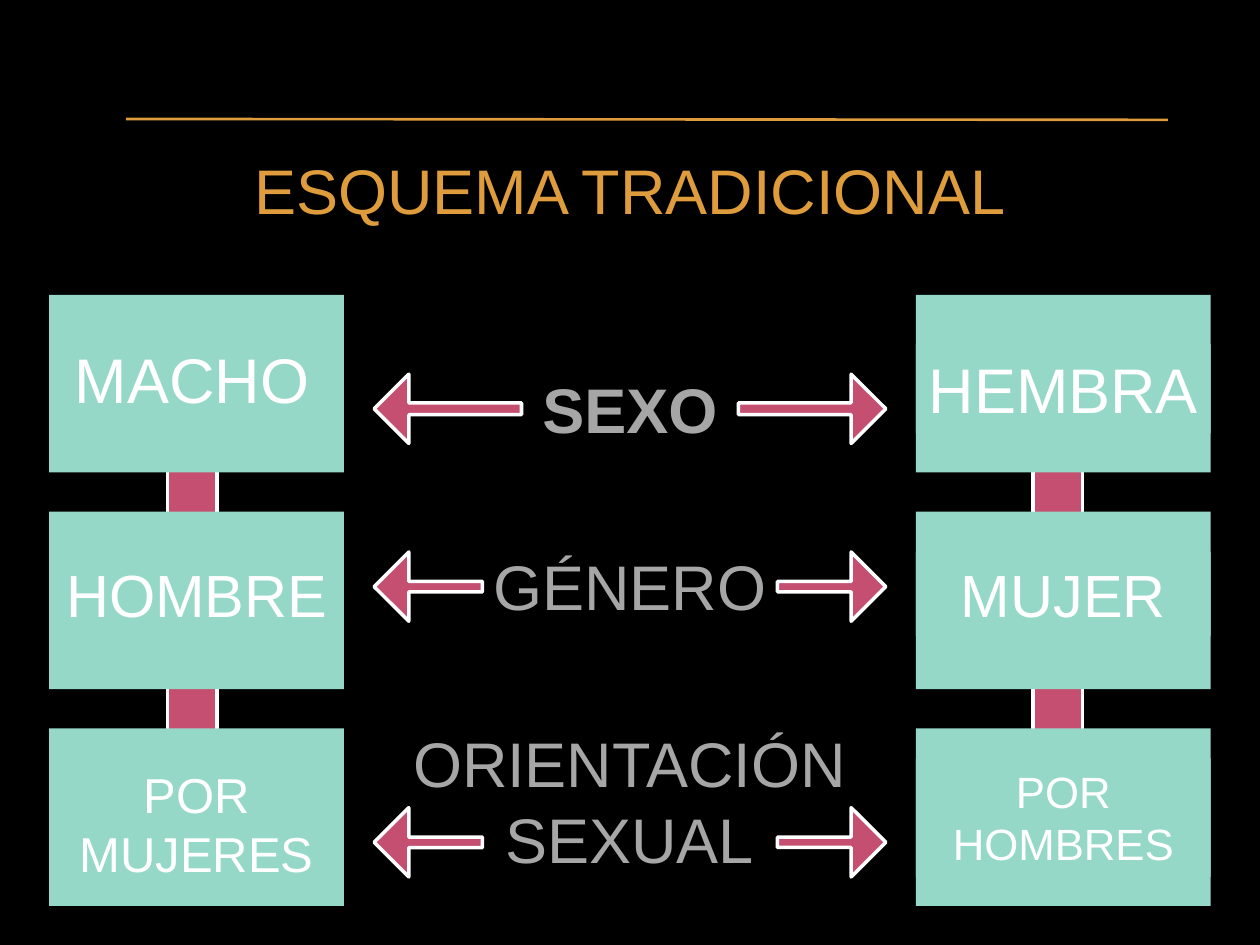
import dataclasses

import pptx
import pptx.dml.color
import pptx.enum.shapes
import pptx.enum.text
import pptx.util
from lxml import etree

Pt = pptx.util.Pt
SHAPES = pptx.enum.shapes.MSO_SHAPE


@dataclasses.dataclass(frozen=True)
class Theme:
    background: str = "000000"
    accent: str = "DE9C3C"
    tile: str = "96D8C8"
    link: str = "C54F71"
    white: str = "FFFFFF"
    grey: str = "A6A6A6"
    font: str = "Arial"
    large: int = 36
    medium: int = 34
    small: int = 28
    smallest: int = 25


THEME = Theme()
PAGE_WIDTH, PAGE_HEIGHT = 720, 540
TILE_WIDTH, TILE_HEIGHT = 168.5, 101.5
LEFT_COLUMN = 28.1
RIGHT_COLUMN = PAGE_WIDTH - LEFT_COLUMN - TILE_WIDTH
FIRST_ROW, ROW_STEP = 168.5, 123.85
ARROW_TIP, ARROW_HEIGHT = 506.2, 39.6


def rgb(value):
    return pptx.dml.color.RGBColor.from_string(value)


def add_block(page, kind, left, top, width, height, fill, outlined=False):
    block = page.shapes.add_shape(kind, Pt(left), Pt(top), Pt(width), Pt(height))
    block.shadow.inherit = False
    block.fill.solid()
    block.fill.fore_color.rgb = rgb(fill)
    if outlined:
        block.line.color.rgb = rgb(THEME.white)
        block.line.width = Pt(2)
    else:
        block.line.fill.background()
    return block


def add_label(page, text, left, top, width, height, size, color, bold=None):
    box = page.shapes.add_textbox(Pt(left), Pt(top), Pt(width), Pt(height))
    box.text_frame.word_wrap = True
    para = box.text_frame.paragraphs[0]
    para.alignment = pptx.enum.text.PP_ALIGN.CENTER
    span = para.add_run()
    span.text = text
    span.font.name = THEME.font
    span.font.size = Pt(size)
    span.font.color.rgb = rgb(color)
    span.font.bold = bold
    return box


def add_arrow_pair(page, top, width, shaft):
    right_start = ARROW_TIP - width
    left_start = PAGE_WIDTH - ARROW_TIP
    for left, rotation in ((right_start, 0), (left_start, 180)):
        arrow = add_block(page, SHAPES.RIGHT_ARROW, left, top, width,
                          ARROW_HEIGHT, THEME.link, outlined=True)
        arrow.adjustments[0] = shaft
        arrow.adjustments[1] = 0.5
        arrow.rotation = rotation


def add_rule(page, start_x, start_y, end_x, end_y):
    rule = page.shapes.add_connector(
        pptx.enum.shapes.MSO_CONNECTOR.STRAIGHT,
        Pt(start_x), Pt(start_y), Pt(end_x), Pt(end_y))
    rule.line.color.rgb = rgb(THEME.accent)
    rule.line.width = Pt(1.5)
    etree.SubElement(rule.element.spPr, pptx.oxml.ns.qn("a:effectLst"))


def main():
    deck = pptx.Presentation()
    deck.slide_width, deck.slide_height = Pt(PAGE_WIDTH), Pt(PAGE_HEIGHT)
    page = deck.slides.add_slide(deck.slide_layouts[6])
    page.background.fill.solid()
    page.background.fill.fore_color.rgb = rgb(THEME.background)

    # Vertical links behind the tiles
    for left, top in ((590.4, 253.4), (95.8, 264.2)):
        add_block(page, SHAPES.RECTANGLE, left, top, 28.1, 174.2,
                  THEME.link, outlined=True)

    # Title and the three dimensions
    add_label(page, "ESQUEMA TRADICIONAL", 0, 82.8, PAGE_WIDTH, 50.4,
              THEME.large, THEME.accent)
    add_label(page, "SEXO", 0, 208.1, PAGE_WIDTH, 50.4,
              THEME.large, THEME.grey, bold=True)
    add_label(page, "GÉNERO", 0, 309.6, PAGE_WIDTH, 50.4,
              THEME.large, THEME.grey)
    add_label(page, "ORIENTACIÓN SEXUAL", 196.6, 410.4, 326.2, 94.3,
              THEME.large, THEME.grey)

    # Tiles in two columns
    for left in (LEFT_COLUMN, RIGHT_COLUMN):
        for row in range(3):
            add_block(page, SHAPES.RECTANGLE, left, FIRST_ROW + row * ROW_STEP,
                      TILE_WIDTH, TILE_HEIGHT, THEME.tile)

    # Arrows from each dimension to both columns
    for top, width, shaft in ((213.8, 84.2, 0.17), (315.4, 61.9, 0.15),
                              (461.5, 61.9, 0.15)):
        add_arrow_pair(page, top, width, shaft)

    # Tile labels
    add_label(page, "MACHO", 33.8, 190.8, 151.9, 51.1, THEME.large, THEME.white)
    for text, left, top, height, size in (
        ("HOMBRE", LEFT_COLUMN, 315.4, 48.2, THEME.medium),
        ("MUJER", RIGHT_COLUMN, 315.4, 48.2, THEME.medium),
        ("HEMBRA", RIGHT_COLUMN, 196.6, 51.1, THEME.large),
        ("POR HOMBRES", RIGHT_COLUMN, 433.4, 67.7, THEME.smallest),
        ("POR MUJERES", LEFT_COLUMN, 433.4, 74.9, THEME.small),
    ):
        label = add_label(page, text, left, top, TILE_WIDTH, height, size,
                          THEME.white)
        label.fill.solid()
        label.fill.fore_color.rgb = rgb(THEME.tile)

    # Rule above the title
    add_rule(page, 72, 68, 667.4, 68.5)

    deck.save("out.pptx")


if __name__ == "__main__":
    main()
